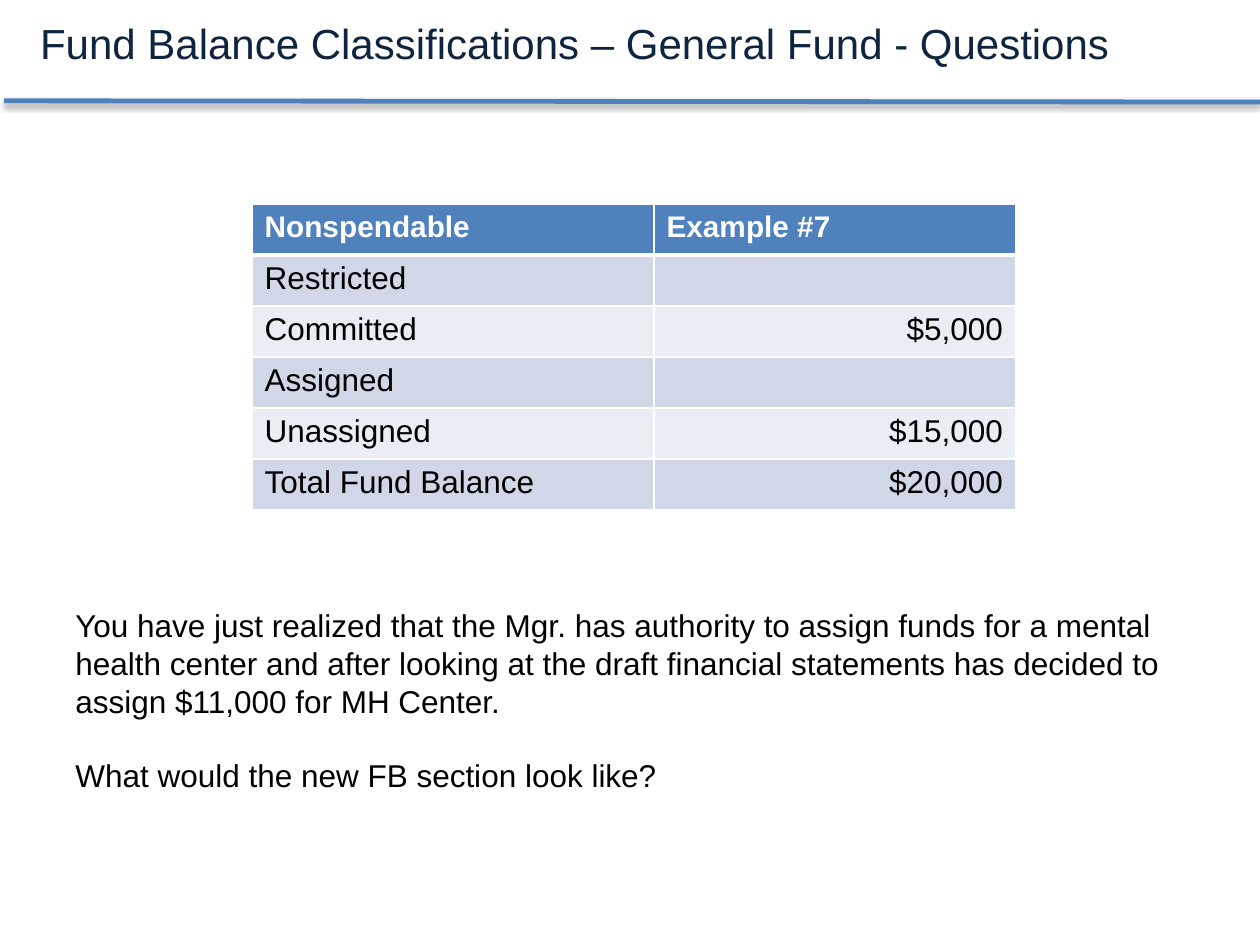
from lxml import etree
from pptx import Presentation
from pptx.dml.color import RGBColor
from pptx.enum.shapes import MSO_CONNECTOR
from pptx.enum.text import MSO_AUTO_SIZE, PP_ALIGN
from pptx.oxml import parse_xml
from pptx.util import Inches, Pt

STRAIGHT = MSO_CONNECTOR.STRAIGHT
FIT_SHAPE = MSO_AUTO_SIZE.SHAPE_TO_FIT_TEXT
LEFT, RIGHT = PP_ALIGN.LEFT, PP_ALIGN.RIGHT

BLUE = RGBColor(0x4F, 0x81, 0xBD)
NAVY = RGBColor(0x0F, 0x24, 0x3E)
BLACK = RGBColor(0, 0, 0)
WHITE = RGBColor(0xFF, 0xFF, 0xFF)
BAND_DARK = RGBColor(0xD0, 0xD8, 0xE8)
BAND_LIGHT = RGBColor(0xE9, 0xED, 0xF4)
DRAWING = "http://schemas.openxmlformats.org/drawingml/2006/main"


def write(paragraph, text, size=18, color=BLACK, bold=False, align=LEFT, before=0):
    paragraph.text = text
    paragraph.alignment = align
    paragraph.space_before = Pt(before)
    paragraph.font.name = "Arial"
    paragraph.font.size = Pt(size)
    paragraph.font.bold = bold
    paragraph.font.color.rgb = color


def add_border(cell, side, width):
    """Add a white border; side is L, R, T or B, added in that order."""
    properties = cell._tc.get_or_add_tcPr()
    border = etree.SubElement(properties, f"{{{DRAWING}}}ln{side}", w=str(Pt(width)))
    fill = etree.SubElement(border, f"{{{DRAWING}}}solidFill")
    etree.SubElement(fill, f"{{{DRAWING}}}srgbClr", val=str(WHITE))


presentation = Presentation()
presentation.slide_width = Inches(10)
presentation.slide_height = Inches(7.5)
slide = presentation.slides.add_slide(presentation.slide_layouts[6])

# Rule under the title
rule = slide.shapes.add_connector(
    STRAIGHT, Inches(0.03), Inches(0.8), Inches(10), Inches(0.81)
)
rule.line.color.rgb = BLUE
rule.line.width = Pt(2.75)
rule._element.spPr.append(parse_xml(
    f'<a:effectLst xmlns:a="{DRAWING}">'
    f'<a:outerShdw blurRad="{Pt(3.1)}" dist="{Pt(1.6)}" dir="5400000" rotWithShape="0">'
    '<a:srgbClr val="000000"><a:alpha val="38000"/></a:srgbClr>'
    '</a:outerShdw></a:effectLst>'
))

# Title
title = slide.shapes.add_textbox(Inches(0.22), Inches(0.09), Inches(8.77), Inches(0.5))
title.text_frame.word_wrap = False
title.text_frame.auto_size = FIT_SHAPE
write(title.text_frame.paragraphs[0],
      "Fund Balance Classifications – General Fund - Questions", size=24, color=NAVY)

# Question
question = slide.shapes.add_textbox(Inches(0.5), Inches(4.76), Inches(9), Inches(1.62))
question.text_frame.word_wrap = True
question.text_frame.auto_size = FIT_SHAPE
write(question.text_frame.paragraphs[0],
      "You have just realized that the Mgr. has authority to assign funds for a mental "
      "health center and after looking at the draft financial statements has decided to "
      "assign $11,000 for MH Center.")
write(question.text_frame.add_paragraph(),
      "What would the new FB section look like?", before=21)

# Fund balance table
balances = [
    ("Nonspendable", "Example #7"),
    ("Restricted", ""),
    ("Committed", "$5,000"),
    ("Assigned", ""),
    ("Unassigned", "$15,000"),
    ("Total Fund Balance", "$20,000"),
]
table = slide.shapes.add_table(
    len(balances), 2, Inches(2), Inches(1.62), Inches(6.06), Inches(2.43)
).table
for column, width in zip(table.columns, (3.19, 2.87)):
    column.width = Inches(width)

for row_index, row in enumerate(balances):
    header = row_index == 0
    band = BAND_DARK if row_index % 2 else BAND_LIGHT
    for column_index, text in enumerate(row):
        cell = table.cell(row_index, column_index)
        for side in "LRTB":
            thick = (header and side == "B") or (row_index == 1 and side == "T")
            add_border(cell, side, 3 if thick else 1)
        cell.fill.solid()
        cell.fill.fore_color.rgb = BLUE if header else band
        write(cell.text_frame.paragraphs[0], text,
              size=17 if header else 18,
              color=WHITE if header else BLACK,
              bold=header,
              align=RIGHT if column_index and not header else LEFT)

presentation.save("out.pptx")
